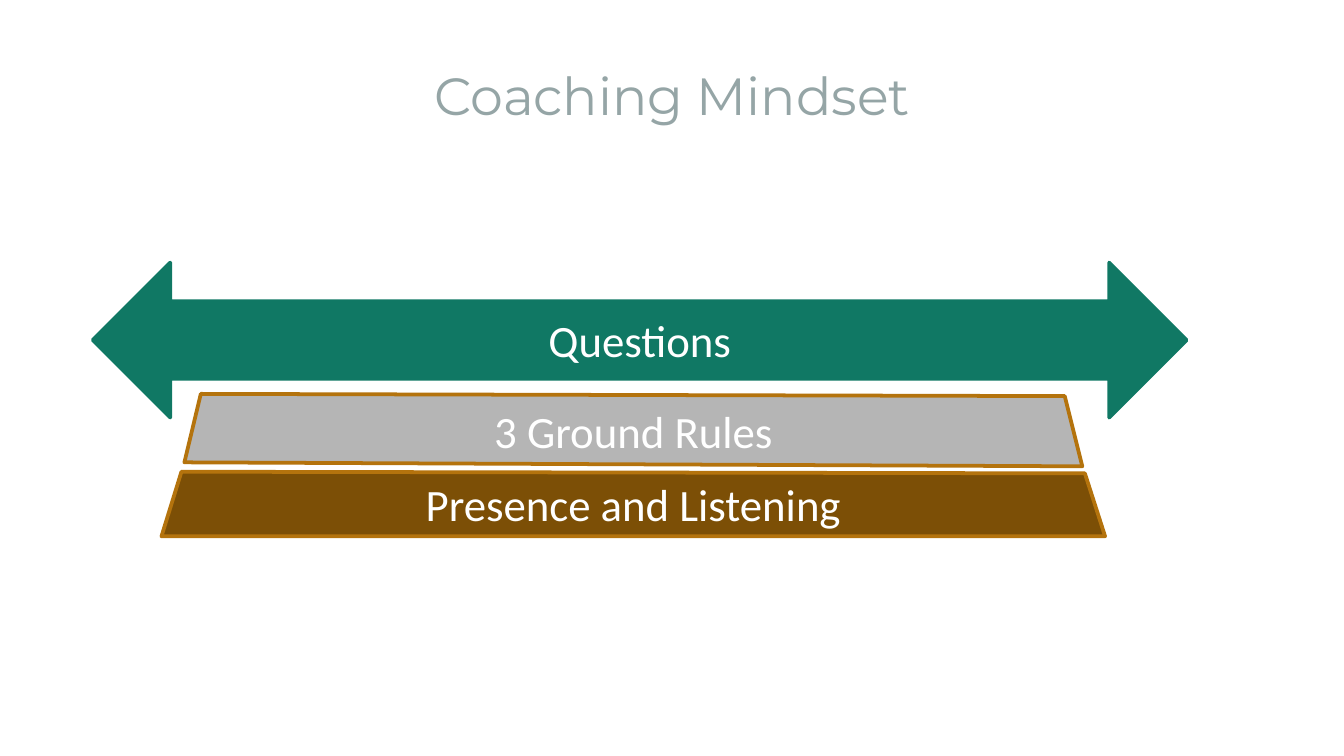
from dataclasses import dataclass

from pptx import Presentation
from pptx import util as u
from pptx.dml.color import RGBColor
from pptx.enum import shapes, text


@dataclass(frozen=True)
class Theme:
    title: str = "95A5A6"
    teal: str = "107864"
    gray: str = "B5B5B5"
    brown: str = "7C4F06"
    edge: str = "B4730D"
    white: str = "FFFFFF"
    head: str = "Montserrat"
    body: str = "Calibri"
    big: int = 28
    mid: int = 24
    line: int = 2


class Deck:
    def __init__(self, theme):
        self.theme = theme
        self.prs = Presentation()
        self.prs.slide_width = u.Pt(720)
        self.prs.slide_height = u.Pt(405)
        self.slide = self.prs.slides.add_slide(self.prs.slide_layouts[6])

    def label(self, shape, words, font, size, color):
        frame = shape.text_frame
        frame.word_wrap = True
        frame.vertical_anchor = text.MSO_ANCHOR.MIDDLE
        para = frame.paragraphs[0]
        para.alignment = text.PP_ALIGN.CENTER
        run = para.add_run()
        run.text = words
        for key, value in {"name": font, "size": u.Pt(size)}.items():
            setattr(run.font, key, value)
        run.font.color.rgb = RGBColor.from_string(color)

    def paint(self, shape, words, fill, edge):
        shape.shadow.inherit = False
        shape.fill.solid()
        shape.fill.fore_color.rgb = RGBColor.from_string(fill)
        shape.line.color.rgb = RGBColor.from_string(edge)
        shape.line.width = u.Pt(self.theme.line)
        self.label(shape, words, self.theme.body, self.theme.mid, self.theme.white)

    def title(self, words, *box):
        shape = self.slide.shapes.add_textbox(*map(u.Pt, box))
        self.label(shape, words, self.theme.head, self.theme.big, self.theme.title)

    def arrow(self, words, fill, *box):
        kind = shapes.MSO_SHAPE.LEFT_RIGHT_ARROW
        shape = self.slide.shapes.add_shape(kind, *map(u.Pt, box))
        self.paint(shape, words, fill, fill)

    def layer(self, words, fill, points):
        start, *rest = [(u.Pt(x), u.Pt(y)) for x, y in points]
        form = self.slide.shapes.build_freeform(*start)
        form.add_line_segments(rest, close=True)
        self.paint(form.convert_to_shape(), words, fill, self.theme.edge)


def main():
    theme = Theme()
    deck = Deck(theme)
    deck.title("Coaching Mindset", 36, 16.5, 648, 68)
    deck.arrow("Questions", theme.teal, 49.7, 140.7, 586, 83)
    deck.layer("3 Ground Rules", theme.gray,
               [(107.6, 211), (570.4, 212.2), (579.8, 249.8), (98.8, 247.7)])
    deck.layer("Presence and Listening", theme.brown,
               [(97.2, 252.7), (581.2, 253.6), (592, 287.3), (86.5, 287.3)])
    deck.prs.save("out.pptx")


if __name__ == "__main__":
    main()
